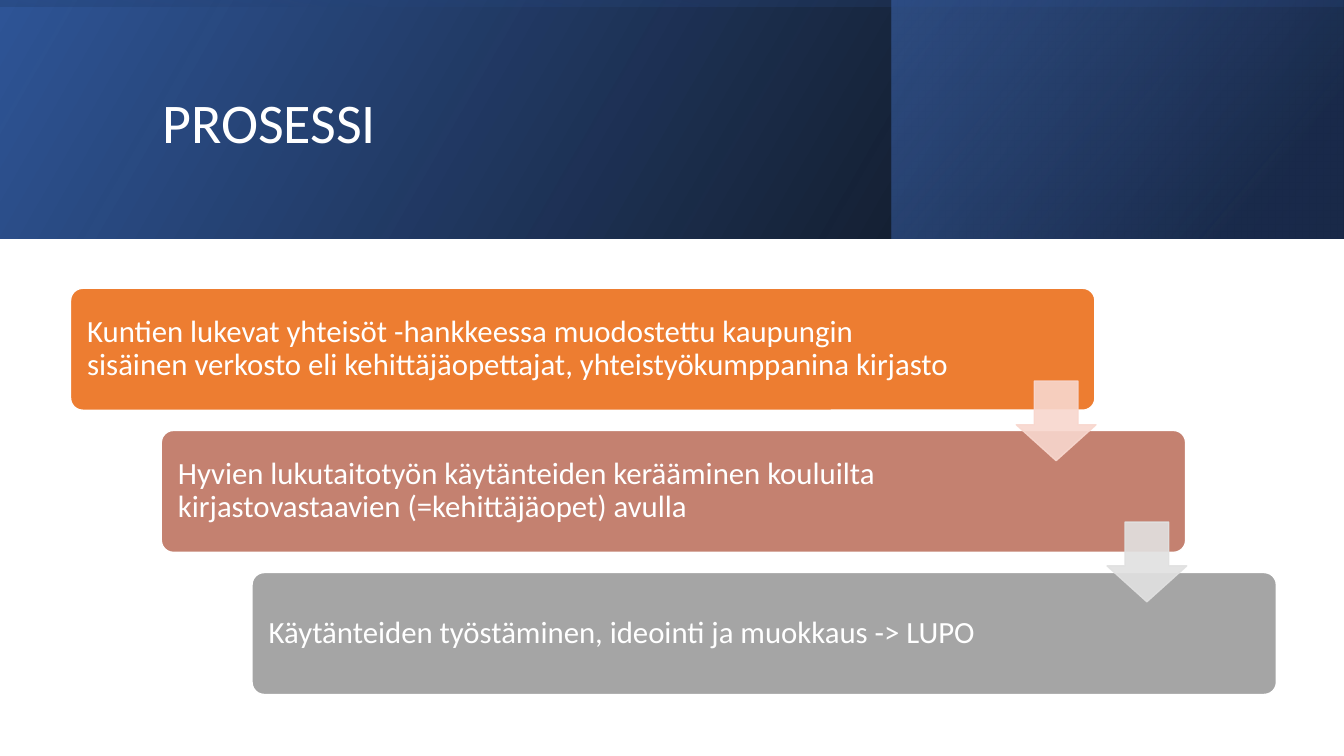
from lxml import etree
from pptx import Presentation
from pptx.dml.color import RGBColor
from pptx.enum.shapes import MSO_SHAPE
from pptx.enum.text import MSO_ANCHOR, MSO_AUTO_SIZE, PP_ALIGN
from pptx.oxml.ns import qn
from pptx.util import Inches, Pt

RECTANGLE = MSO_SHAPE.RECTANGLE
ROUNDED = MSO_SHAPE.ROUNDED_RECTANGLE
DOWN_ARROW = MSO_SHAPE.DOWN_ARROW
MIDDLE = MSO_ANCHOR.MIDDLE
LEFT = PP_ALIGN.LEFT
NO_AUTOFIT = MSO_AUTO_SIZE.NONE

WHITE = RGBColor(0xFF, 0xFF, 0xFF)
BLACK = RGBColor(0x00, 0x00, 0x00)
BLUE = RGBColor(0x2F, 0x55, 0x97)
NAVY = RGBColor(0x20, 0x38, 0x64)
SKY = RGBColor(0x44, 0x72, 0xC4)
ORANGE = RGBColor(0xED, 0x7D, 0x31)
ROSE = RGBColor(0xC4, 0x81, 0x70)
GREY = RGBColor(0xA5, 0xA5, 0xA5)
PALE_ROSE = RGBColor(0xF8, 0xD7, 0xCE)
PALE_GREY = RGBColor(0xE1, 0xE1, 0xE1)


def write(holder, text, size, left_inset=0.1, right_inset=0.1):
    frame = holder.text_frame
    frame.word_wrap = True
    frame.auto_size = NO_AUTOFIT
    frame.vertical_anchor = MIDDLE
    frame.margin_left = Inches(left_inset)
    frame.margin_right = Inches(right_inset)
    paragraph = frame.paragraphs[0]
    paragraph.alignment = LEFT
    paragraph.line_spacing = 0.9
    run = paragraph.add_run()
    run.text = text
    run.font.size = Pt(size)
    run.font.name = "Calibri"
    run.font.color.rgb = WHITE


def set_opacity(shape, percents):
    colors = shape._element.spPr.iter(qn("a:srgbClr"))
    for color, percent in zip(colors, percents):
        etree.SubElement(color, qn("a:alpha")).set("val", str(percent * 1000))


prs = Presentation()
prs.slide_width = Inches(13.33)
prs.slide_height = Inches(7.5)
slide = prs.slides.add_slide(prs.slide_layouts[5])
shapes = slide.shapes

header_bands = [
    ((0, 0, 13.33, 2.37), 0, 330, [(0, BLACK, 96), (1, BLUE, 100)]),
    ((8.84, 0, 4.48, 2.37), 0, 320, [(0.19, NAVY, 68), (1, SKY, 48)]),
    ((5.48, -5.48, 2.37, 13.33), 270, 350, [(0.23, BLUE, 16), (0.99, BLACK, 45)]),
]
for box, rotation, angle, stops in header_bands:
    band = shapes.add_shape(RECTANGLE, *map(Inches, box))
    band.shadow.inherit = False
    band.rotation = rotation
    band._element.spPr.xfrm.set("flipH", "1")
    band.line.fill.background()
    band.fill.gradient()
    band.fill.gradient_angle = 360 - angle
    for stop, (position, color, _) in zip(band.fill.gradient_stops, stops):
        stop.position = position
        stop.color.rgb = color
    set_opacity(band, [opacity for _, _, opacity in stops])

title = shapes.title
title.left, title.top = Inches(1.51), Inches(0.38)
title.width, title.height = Inches(10.63), Inches(1.72)
write(title, "PROSESSI", 40)
shapes._spTree.append(title._element)

steps = [
    ("Kuntien lukevat yhteisöt -hankkeessa muodostettu kaupungin sisäinen "
     "verkosto eli kehittäjäopettajat, yhteistyökumppanina kirjasto", ORANGE),
    ("Hyvien lukutaitotyön käytänteiden kerääminen kouluilta "
     "kirjastovastaavien (=kehittäjäopet) avulla", ROSE),
    ("Käytänteiden työstäminen, ideointi ja muokkaus -> LUPO", GREY),
]
for index, (text, color) in enumerate(steps):
    step = shapes.add_shape(ROUNDED, Inches(0.7 + 0.9 * index), Inches(2.86 + 1.41 * index),
                            Inches(10.16), Inches(1.21))
    step.shadow.inherit = False
    step.adjustments[0] = 0.1
    step.fill.solid()
    step.fill.fore_color.rgb = color
    step.line.color.rgb = WHITE
    step.line.width = Pt(1)
    write(step, text, 22, left_inset=0.13, right_inset=1.3)

for index, color in enumerate([PALE_ROSE, PALE_GREY]):
    arrow = shapes.add_shape(DOWN_ARROW, Inches(10.08 + 0.9 * index), Inches(3.78 + 1.4 * index),
                             Inches(0.79), Inches(0.79))
    arrow.shadow.inherit = False
    arrow.adjustments[0] = 0.55
    arrow.adjustments[1] = 0.45
    arrow.fill.solid()
    arrow.fill.fore_color.rgb = color
    arrow.line.color.rgb = color
    arrow.line.width = Pt(1)
    set_opacity(arrow, [90, 90])

prs.save("out.pptx")
